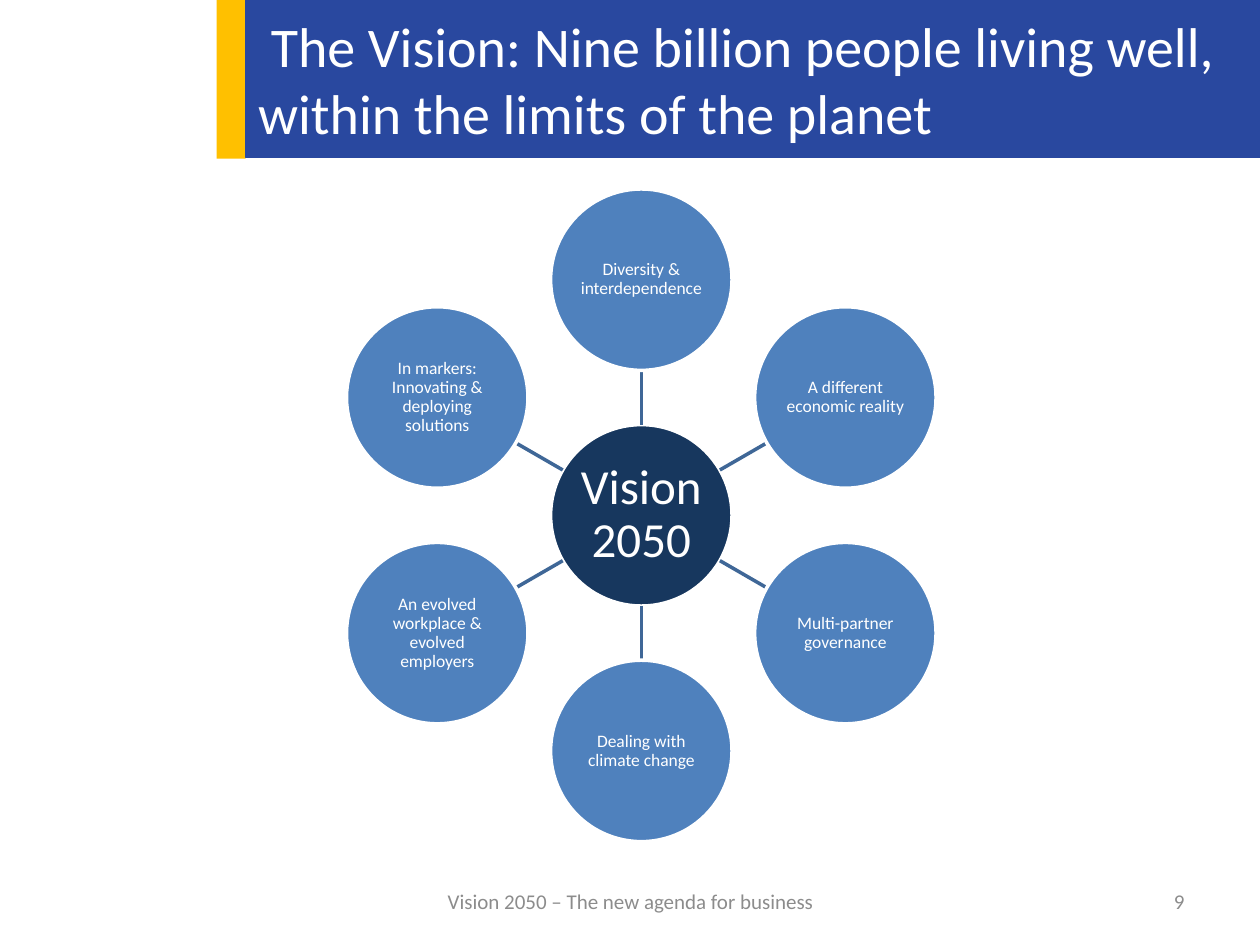
import math

import pptx
import pptx.dml.color
import pptx.enum.shapes
import pptx.enum.text
import pptx.oxml.ns
import pptx.util
from lxml import etree

Inches = pptx.util.Inches
Pt = pptx.util.Pt
SHAPE = pptx.enum.shapes.MSO_SHAPE
ALIGN = pptx.enum.text.PP_ALIGN

COLORS = {
    "accent": "FFC000",
    "banner": "29489F",
    "hub": "17375E",
    "node": "4F81BD",
    "spoke": "3F6797",
    "white": "FFFFFF",
    "footer": "8C8C8C",
}
FONT = "Calibri"

CENTER_X, CENTER_Y = 5.09, 4.09
RING_RADIUS = 1.87
DIAMETER = 1.44
THEMES = [
    "Diversity & interdependence",
    "A different economic reality",
    "Multi-partner governance",
    "Dealing with climate change",
    "An evolved workplace & evolved employers",
    "In markers: Innovating & deploying solutions",
]


class SlideBuilder:
    def __init__(self, slide):
        self.slide = slide

    def color(self, name):
        return pptx.dml.color.RGBColor.from_string(COLORS[name])

    def set_text(self, shape, text, size, color, align, inset=None, spacing=None):
        tf = shape.text_frame
        tf.text = text
        tf.word_wrap = True
        tf.vertical_anchor = pptx.enum.text.MSO_ANCHOR.MIDDLE
        if inset is not None:
            tf.margin_left = tf.margin_right = Inches(inset)
            tf.margin_top = tf.margin_bottom = Inches(inset)
        p = tf.paragraphs[0]
        p.alignment = align
        if spacing:
            p.line_spacing = spacing
        for r in p.runs:
            r.font.name = FONT
            r.font.size = Pt(size)
            r.font.color.rgb = self.color(color)

    def shape(self, kind, x, y, w, h, fill, line=None, width=1):
        sp = self.slide.shapes.add_shape(kind, Inches(x), Inches(y), Inches(w), Inches(h))
        sp.shadow.inherit = False
        sp.fill.solid()
        sp.fill.fore_color.rgb = self.color(fill)
        if line:
            sp.line.color.rgb = self.color(line)
            sp.line.width = Pt(width)
        else:
            sp.line.fill.background()
        return sp

    def circle(self, x, y, fill, text, size, inset):
        sp = self.shape(SHAPE.OVAL, x - DIAMETER / 2, y - DIAMETER / 2,
                        DIAMETER, DIAMETER, fill, "white", 2)
        self.set_text(sp, text, size, "white", ALIGN.CENTER, inset, 0.9)

    def spoke(self, x1, y1, x2, y2):
        line = self.slide.shapes.add_connector(
            pptx.enum.shapes.MSO_CONNECTOR.STRAIGHT,
            Inches(x1), Inches(y1), Inches(x2), Inches(y2))
        line.line.color.rgb = self.color("spoke")
        line.line.width = Pt(2)
        etree.SubElement(line._element.spPr, pptx.oxml.ns.qn("a:effectLst"))

    def label(self, x, y, w, h, text, align):
        box = self.slide.shapes.add_textbox(Inches(x), Inches(y), Inches(w), Inches(h))
        self.set_text(box, text, 12, "footer", align)


def ring_point(angle, radius):
    return CENTER_X + radius * math.sin(angle), CENTER_Y - radius * math.cos(angle)


def main():
    prs = pptx.Presentation()
    prs.slide_width, prs.slide_height = Inches(10), Inches(7.5)
    s = SlideBuilder(prs.slides.add_slide(prs.slide_layouts[6]))

    s.shape(SHAPE.RECTANGLE, 1.72, 0, 0.23, 1.26, "accent")
    banner = s.shape(SHAPE.RECTANGLE, 1.95, 0, 8.05, 1.25, "banner", "banner", 0.75)
    s.set_text(banner, " The Vision: Nine billion people living well, within the limits of the planet",
               32, "white", ALIGN.LEFT)

    s.circle(CENTER_X, CENTER_Y, "hub", "Vision 2050", 28, 0.02)
    for i, theme in enumerate(THEMES):
        angle = i * math.tau / len(THEMES)
        s.spoke(*ring_point(angle, DIAMETER / 2),
                *ring_point(angle, RING_RADIUS - DIAMETER / 2))
        s.circle(*ring_point(angle, RING_RADIUS), "node", theme, 10, 0.01)

    s.label(7.17, 6.95, 2.33, 0.4, "9", ALIGN.RIGHT)
    s.label(3.42, 6.95, 3.17, 0.4, "Vision 2050 – The new agenda for business", ALIGN.CENTER)
    prs.save("out.pptx")


if __name__ == "__main__":
    main()
